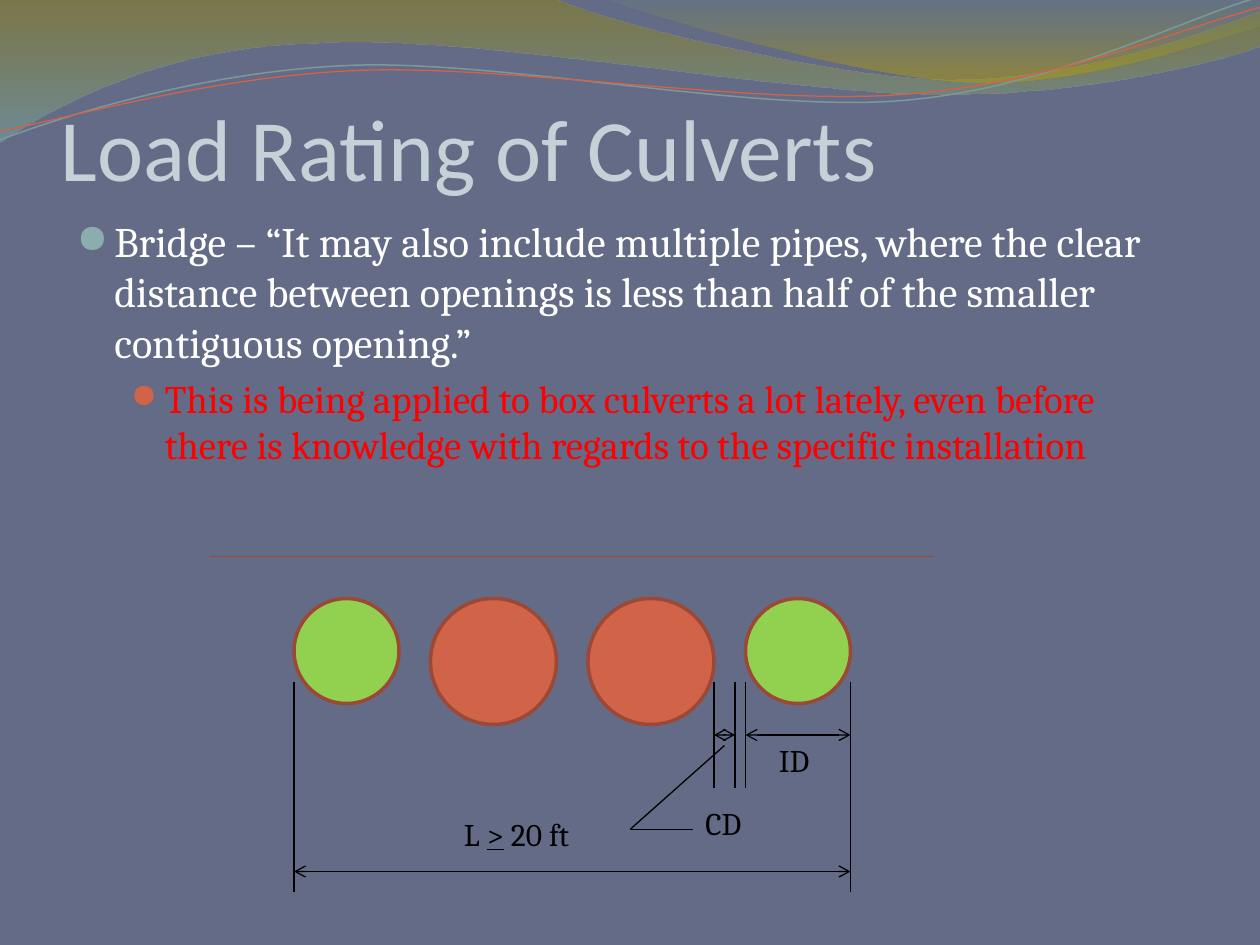
"""Build the slide on load rating of culverts."""
from math import cos, radians, sin
from lxml.etree import Element, SubElement
from pptx import Presentation
from pptx.dml.color import RGBColor
from pptx.enum.shapes import MSO_CONNECTOR as CONNECTOR, MSO_SHAPE as SHAPE
from pptx.enum.text import MSO_ANCHOR as ANCHOR, MSO_AUTO_SIZE as AUTO_SIZE
from pptx.oxml.ns import qn
from pptx.util import Pt

color = RGBColor.from_string


def add_curve(start, segments, close, tilt=0, center=(0, 0)):
    points = [start]
    for segment in segments:
        points += zip(segment[::2], segment[1::2])
    cx, cy = center
    c, s = cos(radians(tilt)), sin(radians(tilt))
    points = [(Pt(cx + (x - cx) * c - (y - cy) * s), Pt(cy + (x - cx) * s + (y - cy) * c))
              for x, y in points]
    builder = slide.shapes.build_freeform(*points[0])
    builder.add_line_segments(points[1:], close=close)
    shape = builder.convert_to_shape()
    shape.shadow.inherit = False
    shape.rotation = -tilt
    outline = next(shape._element.iter(qn("a:path")))
    edges = iter(outline.findall(qn("a:lnTo")))
    for segment in segments:
        edge = next(edges)
        if len(segment) == 6:
            curve = Element(qn("a:cubicBezTo"))
            edge.addprevious(curve)
            for piece in (edge, next(edges), next(edges)):
                curve.append(piece[0])
                outline.remove(piece)
    return shape


def add_run(paragraph, text, size, font, rgb):
    run = paragraph.add_run()
    run.text = text
    run.font.size = Pt(size)
    run.font.name = font
    run.font.color.rgb = color(rgb)
    return run


presentation = Presentation()
presentation.slide_width, presentation.slide_height = Pt(720), Pt(540)
slide = presentation.slides.add_slide(presentation.slide_layouts[6])
slide.background.fill.solid()
slide.background.fill.fore_color.rgb = color("646B86")

bands = [
    ((0, 0), [(316.8, -0.7), (342.7, 12.2, 478.1, 45.4, 545.8, 45.4),
              (614.2, 45.4, 689.8, 18.7, 720, 6.5), (720.7, 25.9),
              (707.8, 31.7, 626.4, 54.7, 537.1, 54), (447.8, 54, 275, 20.2, 185, 24.5),
              (92.9, 25.9, 33.1, 59.8, -0.7, 81.4)],
     [(0, "978500", 45), (1, "77A5A6", 55)]),
    ((344.9, -0.7), [(366.5, 7.9, 491, 44.6, 553.7, 46.8),
                     (616.3, 49.7, 691.9, 23, 720, 15.1), (720, 0)],
     [(0, "648484", 30), (0.8, "B49F00", 45)]),
]
for start, segments, stops in bands:
    band = add_curve(start, segments, True)
    band.line.fill.background()
    band.fill.gradient()
    band.fill.gradient_angle = 270
    for stop, (position, rgb, opacity) in zip(band.fill.gradient_stops, stops):
        stop.position = position
        stop.color.rgb = color(rgb)
    for element, (position, rgb, opacity) in zip(band._element.iter(qn("a:gs")), stops):
        SubElement(element[0], qn("a:alpha"), val=str(opacity * 1000))

waves = [
    ((0, 79.9), [(34.6, 67, 113.8, 41, 199.4, 37.4), (284.4, 33.8, 427, 64.1, 513.4, 57.6),
                 (599.8, 51.1, 675.4, 10.8, 718.6, -1.4)], (359.3, 41.4), "7C999A", 0.85),
    ((0, 74.9), [(33.8, 69.1, 118.1, 43.9, 203.8, 40.3), (290.2, 36.7, 429.8, 60.5, 516.2, 54),
                 (601.9, 48.2, 677.5, 15.1, 720, 4.3)], (359.6, 42.5), "D16349", 0.75),
]
for start, segments, center, rgb, width in waves:
    wave = add_curve(start, segments, False, 2.7, center)
    wave.fill.background()
    wave.line.color.rgb = color(rgb)
    wave.line.width = Pt(width)

title = slide.shapes.add_textbox(Pt(34.56), Pt(23.76), Pt(648), Pt(90)).text_frame
title.word_wrap = True
title.vertical_anchor = ANCHOR.BOTTOM
title.margin_left = title.margin_right = title.margin_bottom = 0
add_run(title.paragraphs[0], "Load Rating of Culverts", 50, "Calibri", "C5D1D7")

body = slide.shapes.add_textbox(Pt(36.72), Pt(119.52), Pt(648), Pt(135.36)).text_frame
body.word_wrap = True
bullets = [
    ("Bridge – “It may also include multiple pipes, where the clear distance between "
     "openings is less than half of the smaller contiguous opening.”",
     24, "FFFFFF", 0, 21.6, 21.6, "8CADAE", 95),
    ("This is being applied to box culverts a lot lately, even before there is knowledge "
     "with regards to the specific installation",
     22.2, "FF0000", 1, 50.4, 19.44, "D16349", 85),
]
for text, size, rgb, level, margin, hanging, bullet_rgb, bullet_size in bullets:
    paragraph = body.add_paragraph() if level else body.paragraphs[0]
    paragraph.level = level
    paragraph.space_before = Pt(size * 0.2)
    add_run(paragraph, text, size, "Cambria", rgb)
    properties = paragraph._p.get_or_add_pPr()
    properties.set("marL", str(Pt(margin)))
    properties.set("indent", str(-Pt(hanging)))
    bullet_color = SubElement(properties, qn("a:buClr"))
    SubElement(bullet_color, qn("a:srgbClr"), val=bullet_rgb)
    SubElement(properties, qn("a:buSzPct"), val=str(bullet_size * 1000))
    SubElement(properties, qn("a:buFont"), typeface="OpenSymbol")
    SubElement(properties, qn("a:buChar"), char="●")

pipes = [(246, 72, "D16349"), (336, 72, "D16349"), (426, 60, "92D050"), (168, 60, "92D050")]
for left, diameter, rgb in pipes:
    pipe = slide.shapes.add_shape(SHAPE.OVAL, Pt(left), Pt(342), Pt(diameter), Pt(diameter))
    pipe.shadow.inherit = False
    pipe.fill.solid()
    pipe.fill.fore_color.rgb = color(rgb)
    pipe.line.color.rgb = color("9B4936")
    pipe.line.width = Pt(2)

ground = [(120, 318, 534, 318, "9C4834", False)]
extensions = [(x, 390, x, bottom, "000000", False)
              for x, bottom in [(420, 450), (486, 510), (426, 450), (408, 450), (168, 510)]]
dimensions = [(left, y, right, y, "000000", True)
              for left, right, y in [(426, 486, 420), (408, 420, 420), (168, 486, 498)]]
leader = [(414, 426, 360, 474, "000000", False), (360, 474, 396, 474, "000000", False)]
for x1, y1, x2, y2, rgb, arrows in ground + extensions + dimensions + leader:
    line = slide.shapes.add_connector(CONNECTOR.STRAIGHT, Pt(x1), Pt(y1), Pt(x2), Pt(y2))
    line.line.color.rgb = color(rgb)
    line.line.width = Pt(0.75)
    if arrows:
        for end in ("a:headEnd", "a:tailEnd"):
            SubElement(line.line._get_or_add_ln(), qn(end), type="arrow")
    SubElement(line._element.spPr, qn("a:effectLst"))

labels = [(438, 420, 34.56, ["ID"]), (396, 456, 40.32, ["CD"]),
          (258, 462, 78.48, ["L ", ">", " 20 ft"])]
for left, top, width, parts in labels:
    label = slide.shapes.add_textbox(Pt(left), Pt(top), Pt(width), Pt(28.8)).text_frame
    label.word_wrap = False
    label.auto_size = AUTO_SIZE.SHAPE_TO_FIT_TEXT
    for part in parts:
        run = add_run(label.paragraphs[0], part, 18, "Cambria", "000000")
        if part == ">":
            run.font.underline = True

presentation.save("out.pptx")
